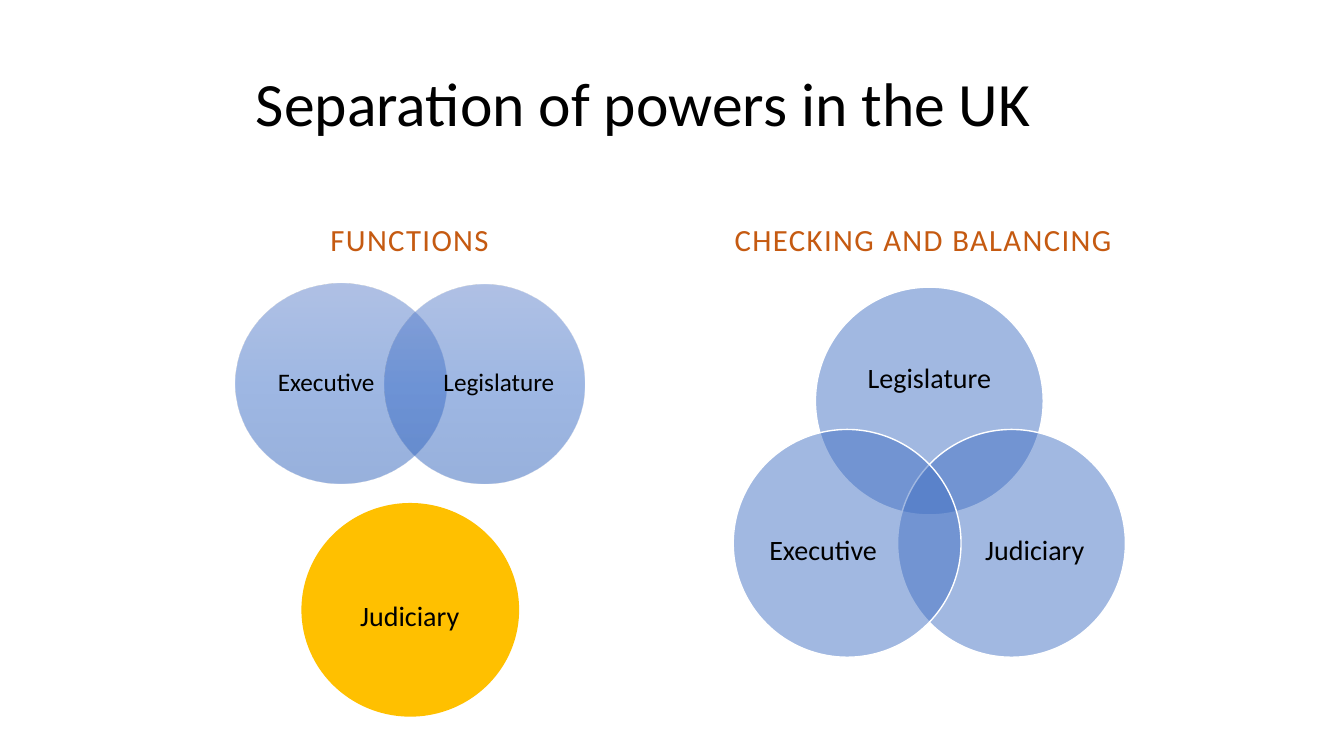
from dataclasses import dataclass
from math import cos, radians, sin
from typing import Optional

from lxml.etree import SubElement
from pptx import Presentation
from pptx.dml.color import RGBColor
from pptx.enum.shapes import MSO_SHAPE
from pptx.enum.text import MSO_ANCHOR, PP_ALIGN
from pptx.oxml.ns import qn
from pptx.util import Inches, Pt

COLOURS = {
    "text": "000000",
    "heading": "C55A11",
    "outline": "FFFFFF",
    "venn": "4472C4",
    "judiciary": "FFC000",
    "fade_top": "6183CB",
    "fade_middle": "3E70CA",
    "fade_bottom": "3062BB",
}
FADE = (("fade_top", 0), ("fade_middle", 50), ("fade_bottom", 100))
HALF_CLEAR = "50000"

deck = Presentation()
deck.slide_width, deck.slide_height = Inches(13.333), Inches(7.5)
slide = deck.slides.add_slide(deck.slide_layouts[6])


@dataclass
class Area:
    """Left, top, width and height in percent of the slide."""
    left: float
    top: float
    width: float
    height: float

    def emu(self) -> tuple[int, int, int, int]:
        across, down = deck.slide_width / 100, deck.slide_height / 100
        return (round(self.left * across), round(self.top * down),
                round(self.width * across), round(self.height * down))


@dataclass
class Caption:
    words: str
    area: Area
    size: int
    colour: str = "text"
    align: PP_ALIGN = PP_ALIGN.CENTER
    anchor: MSO_ANCHOR = MSO_ANCHOR.MIDDLE
    tracking: int = 0
    inset: Optional[int] = None
    after: float = 0


@dataclass
class Power:
    name: str
    circle: Area
    label: Area
    size: int
    style: str


def rgb(colour: str) -> RGBColor:
    return RGBColor.from_string(COLOURS[colour])


def apply(target: object, values: dict) -> None:
    for attribute, value in values.items():
        setattr(target, attribute, value)


def draw_caption(caption: Caption) -> None:
    frame = slide.shapes.add_textbox(*caption.area.emu()).text_frame
    apply(frame, {"word_wrap": True, "vertical_anchor": caption.anchor})
    if caption.inset is not None:
        sides = ("left", "top", "right", "bottom")
        apply(frame, {f"margin_{side}": caption.inset for side in sides})
    paragraph = frame.paragraphs[0]
    apply(paragraph, {"alignment": caption.align, "line_spacing": 0.9,
                      "space_after": Pt(caption.after)})
    run = paragraph.add_run()
    run.text = caption.words
    apply(run.font, {"name": "Calibri", "size": Pt(caption.size)})
    run.font.color.rgb = rgb(caption.colour)
    if caption.tracking:
        run.font._element.set("spc", str(caption.tracking))


def fill_fade(fill: object, stops: object) -> None:
    fill.gradient_angle = 270
    for stop in list(stops):
        stops.remove(stop)
    for colour, percent in FADE:
        stop = SubElement(stops, qn("a:gs"), pos=str(percent * 1000))
        shade = SubElement(stop, qn("a:srgbClr"), val=COLOURS[colour])
        SubElement(shade, qn("a:alpha"), val=HALF_CLEAR)


def draw_power(power: Power) -> None:
    circle = slide.shapes.add_shape(MSO_SHAPE.OVAL, *power.circle.emu())
    circle.shadow.inherit = False
    if power.style == "fade":
        circle.fill.gradient()
        fill_fade(circle.fill, circle._element.spPr.find(".//" + qn("a:gsLst")))
    else:
        circle.fill.solid()
        circle.fill.fore_color.rgb = rgb(power.style)
    if power.style == "venn":
        shade = circle._element.spPr.find(qn("a:solidFill") + "/" + qn("a:srgbClr"))
        SubElement(shade, qn("a:alpha"), val=HALF_CLEAR)
        circle.line.color.rgb = rgb("outline")
        circle.line.width = Pt(1)
    else:
        circle.line.fill.background()
    draw_caption(Caption(power.name, power.label, power.size,
                         inset=0, after=power.size * 0.35))


def venn_circle(angle: float) -> Area:
    width, height = 16.95, 30.13
    return Area(69.15 + 7.06 * cos(radians(angle)) - width / 2,
                65.6 + 12.55 * sin(radians(angle)) - height / 2, width, height)


HEADING = {"size": 22, "colour": "heading", "anchor": MSO_ANCHOR.BOTTOM, "tracking": 100}
CAPTIONS = (
    Caption("Separation of powers in the UK", Area(18.3, 5.47, 63.4, 17.33), 44,
            align=PP_ALIGN.LEFT),
    Caption("FUNCTIONS", Area(12.98, 26.93, 35, 7.87), **HEADING),
    Caption("CHECKING AND BALANCING", Area(51.2, 24.53, 35, 10.27), **HEADING),
)
POWERS = (
    Power("Legislature", venn_circle(-90), Area(62.93, 43.33, 12.45, 13.6), 20, "venn"),
    Power("Judiciary", venn_circle(30), Area(71.93, 64.67, 10.13, 16.53), 20, "venn"),
    Power("Executive", venn_circle(150), Area(56.18, 64.67, 10.13, 16.53), 20, "venn"),
    Power("Executive", Area(17.55, 37.47, 15.68, 26.53),
          Area(19.73, 40.53, 9.08, 20.27), 18, "fade"),
    Power("Legislature", Area(28.65, 37.6, 14.85, 26.4),
          Area(32.85, 40.67, 8.55, 20.13), 18, "fade"),
    Power("Judiciary", Area(22.43, 66.53, 16.2, 28.27),
          Area(25.65, 73.87, 9.68, 15.6), 20, "judiciary"),
)

for caption in CAPTIONS:
    draw_caption(caption)
for power in POWERS:
    draw_power(power)

deck.save("out.pptx")
